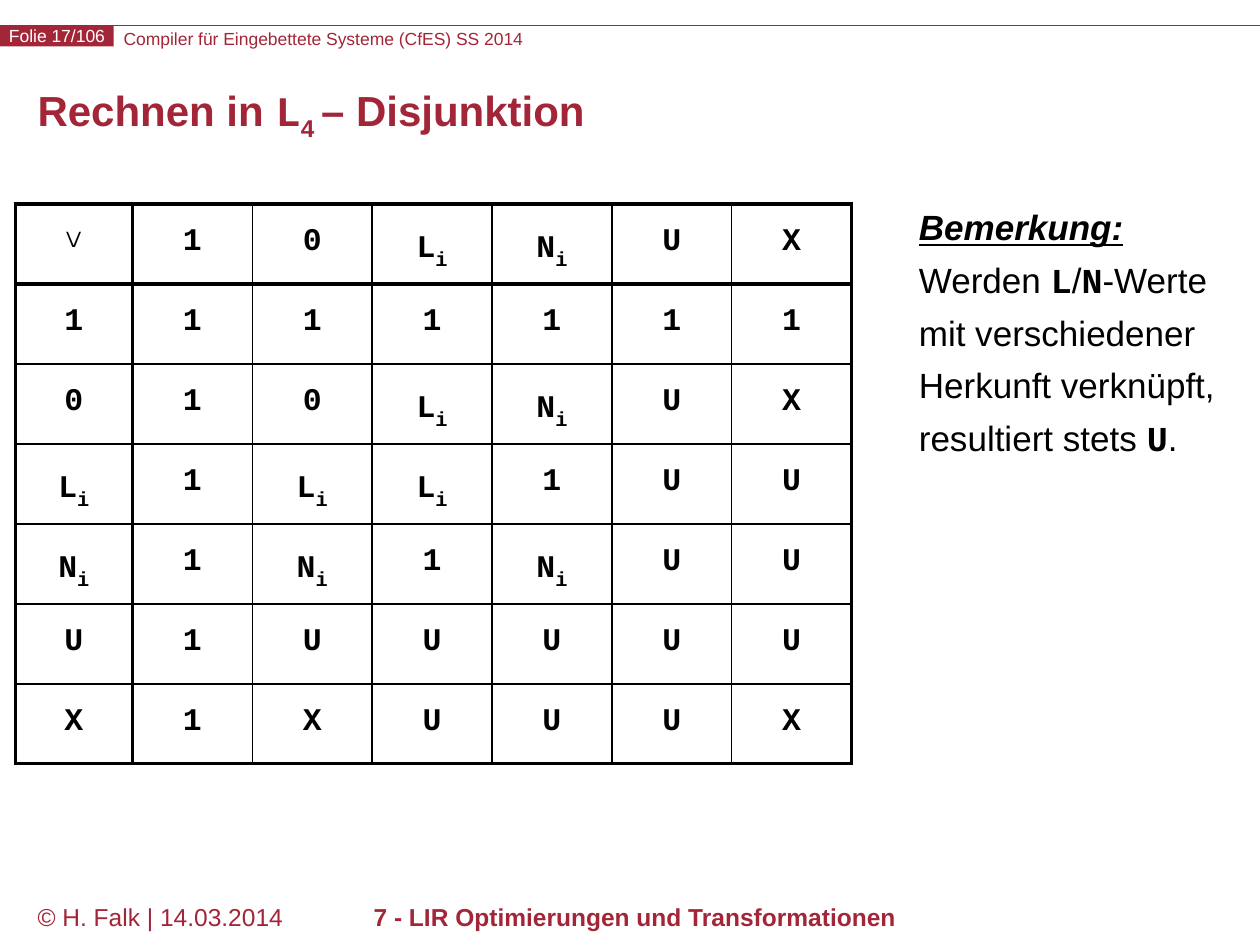
"""Build the slide on disjunction in the four-valued logic L4."""
from dataclasses import dataclass
from typing import NamedTuple, Optional

from lxml import etree
from pptx import Presentation
from pptx import util as u
from pptx.dml.color import RGBColor
from pptx.enum import shapes, text
from pptx.oxml import ns

Pt = u.Pt
COLORS = {"red": "A32638", "black": "000000", "white": "FFFFFF"}
SANS, MONO = "Arial", "Courier New"
THIN, THICK = 1, 2.25
COLUMNS = [67] + [68.5] * 6
ROW_HEIGHT = 45.7
TRUTH_TABLE = [
    "∨ 1 0 Li Ni U X".split(),
    "1 1 1 1 1 1 1".split(),
    "0 1 0 Li Ni U X".split(),
    "Li 1 Li Li 1 U U".split(),
    "Ni 1 Ni 1 Ni U U".split(),
    "U 1 U U U U U".split(),
    "X 1 X U U U X".split(),
]


class Run(NamedTuple):
    text: str
    font: Optional[str] = None
    bold: Optional[bool] = None
    size: Optional[float] = None
    sub: bool = False


@dataclass
class Label:
    box: tuple[float, float, float, float]
    lines: list[list[Run]]
    size: float
    color: str = "red"
    bold: bool = False
    align: text.PP_ALIGN = text.PP_ALIGN.LEFT
    anchor: text.MSO_ANCHOR = text.MSO_ANCHOR.TOP
    inset: bool = True
    line_spacing: Optional[float] = None
    space_before: float = 0


def rgb(name: str) -> RGBColor:
    return RGBColor.from_string(COLORS[name])


def write(p, runs: list[Run], size: float, color: str, bold: bool, font: str) -> None:
    p.font.size, p.font.bold, p.font.name = Pt(size), bold, font
    p.font.color.rgb = rgb(color)
    for run in runs:
        r = p.add_run()
        r.text = run.text
        if run.font:
            r.font.name = run.font
        if run.bold is not None:
            r.font.bold = run.bold
        if run.size:
            r.font.size = Pt(run.size)
        if run.sub:
            r.font._element.set("baseline", "-25000")


def fill_frame(tf, label: Label) -> None:
    tf.word_wrap = True
    tf.vertical_anchor = label.anchor
    if not label.inset:
        tf.margin_left = tf.margin_right = tf.margin_top = tf.margin_bottom = 0
    for i, runs in enumerate(label.lines):
        p = tf.add_paragraph() if i else tf.paragraphs[0]
        p.alignment = label.align
        p.space_before = Pt(label.space_before)
        if label.line_spacing:
            p.line_spacing = label.line_spacing
        write(p, runs, label.size, label.color, label.bold, SANS)


def add_label(slide, label: Label):
    sp = slide.shapes.add_textbox(*map(Pt, label.box))
    fill_frame(sp.text_frame, label)
    return sp


def add_badge(slide, label: Label) -> None:
    sp = slide.shapes.add_shape(shapes.MSO_SHAPE.RECTANGLE, *map(Pt, label.box))
    sp.shadow.inherit = False
    sp.fill.solid()
    sp.fill.fore_color.rgb = rgb("red")
    sp.line.fill.background()
    fill_frame(sp.text_frame, label)


def add_rule(slide, y: float) -> None:
    line = slide.shapes.add_connector(shapes.MSO_CONNECTOR.STRAIGHT, 0, Pt(y), Pt(720), Pt(y))
    line.line.color.rgb = rgb("red")
    line.line.width = Pt(0.75)
    etree.SubElement(line._element.spPr, ns.qn("a:effectLst"))


def set_borders(cell, widths: dict[str, float]) -> None:
    tc_pr = cell._tc.get_or_add_tcPr()
    for side, width in widths.items():
        ln = etree.SubElement(tc_pr, ns.qn(f"a:ln{side}"), w=str(int(Pt(width))))
        fill = etree.SubElement(ln, ns.qn("a:solidFill"))
        etree.SubElement(fill, ns.qn("a:srgbClr"), val=COLORS["black"])


def add_truth_table(slide, left: float, top: float) -> None:
    n = len(TRUTH_TABLE)
    frame = slide.shapes.add_table(n, n, Pt(left), Pt(top), Pt(sum(COLUMNS)), Pt(n * ROW_HEIGHT))
    table = frame.table
    table.first_row = table.horz_banding = False
    for column, width in zip(table.columns, COLUMNS):
        column.width = Pt(width)
    thick_edges = (0, 1, n)
    for i, row in enumerate(TRUTH_TABLE):
        table.rows[i].height = Pt(ROW_HEIGHT)
        for j, value in enumerate(row):
            cell = table.cell(i, j)
            edges = {"L": j, "R": j + 1, "T": i, "B": i + 1}
            set_borders(cell, {s: THICK if e in thick_edges else THIN for s, e in edges.items()})
            cell.fill.background()
            cell.margin_left = cell.margin_right = cell.margin_bottom = 0
            cell.margin_top = Pt(8 if value == "∨" else 11.8)
            runs = [Run(value[0])]
            if len(value) > 1:
                runs.append(Run(value[1], size=20, sub=True))
                cell.margin_top = Pt(14)
            p = cell.text_frame.paragraphs[0]
            p.alignment = text.PP_ALIGN.CENTER
            write(p, runs, 20 if value == "∨" else 18, "black", True, MONO)


def main() -> None:
    prs = Presentation()
    prs.slide_width, prs.slide_height = Pt(720), Pt(540)
    slide = prs.slides.add_slide(prs.slide_layouts[6])
    center, middle = text.PP_ALIGN.CENTER, text.MSO_ANCHOR.MIDDLE

    add_rule(slide, 14.4)
    add_label(slide, Label((70.6, 15.8, 475, 12.2), inset=False, size=10,
                           lines=[[Run("Compiler für Eingebettete Systeme (CfES) SS 2014")]]))
    add_badge(slide, Label((0, 14.4, 65, 12.2), [[Run("Folie 17/106")]], 10, "white",
                           align=center, anchor=middle, inset=False))
    add_label(slide, Label((14.4, 512, 158.4, 36), [[Run("© H. Falk | 14.03.2014")]], 14))
    add_label(slide, Label((144.7, 512, 436.3, 36), bold=True, size=14, align=center,
                           lines=[[Run("7 - LIR Optimierungen und Transformationen")]]))
    title = [Run("Rechnen in "), Run("L", MONO), Run("4 ", sub=True), Run("– Disjunktion")]
    add_label(slide, Label((14.4, 43.2, 692, 51.8), [title], 24, bold=True,
                           anchor=middle, line_spacing=Pt(24)))
    remark = add_label(slide, Label((518, 109.4, 188.4, 393), size=20, color="black",
                                    line_spacing=1.2, space_before=1.25, lines=[
        [Run("Bemerkung:")],
        [Run("Werden "), Run("L", MONO, True), Run("/"), Run("N", MONO, True), Run("-Werte")],
        [Run("mit verschiedener")],
        [Run("Herkunft verknüpft,")],
        [Run("resultiert stets "), Run("U", MONO, True), Run(".")],
    ]))
    heading = remark.text_frame.paragraphs[0].font
    heading.bold = heading.italic = heading.underline = True
    add_truth_table(slide, 8.7, 116.6)
    prs.save("out.pptx")


if __name__ == "__main__":
    main()
